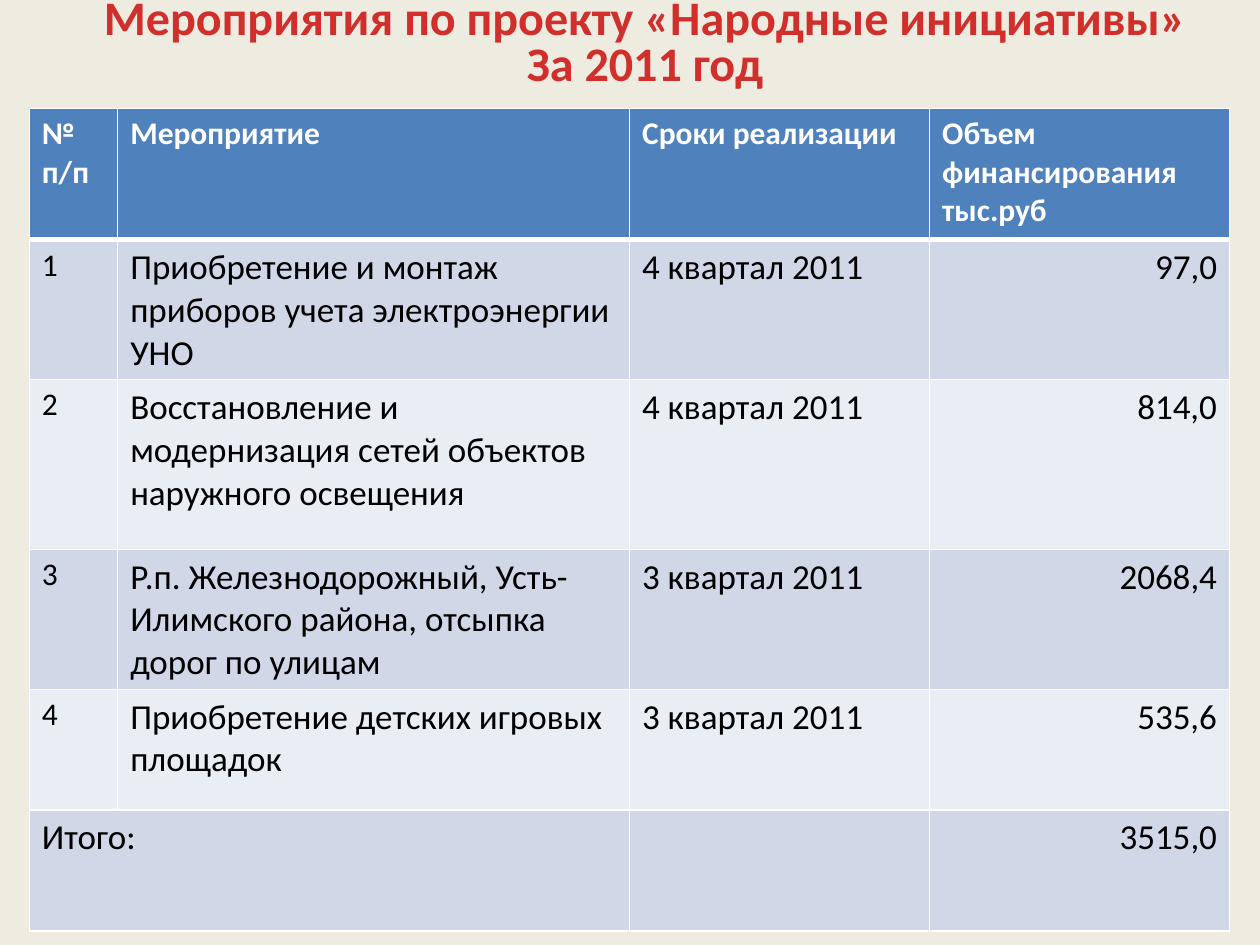
from dataclasses import dataclass

from lxml.etree import SubElement
from pptx import Presentation
from pptx.dml.color import RGBColor as RGB
from pptx.enum.text import MSO_ANCHOR as Anchor, PP_ALIGN as Align
from pptx.oxml.ns import qn
from pptx.util import Pt


@dataclass(frozen=True)
class Theme:
    font: str = "Calibri"
    page: RGB = RGB(0xEE, 0xEC, 0xE1)
    title: RGB = RGB(0xD0, 0x2F, 0x2C)
    header: RGB = RGB(0x4F, 0x81, 0xBD)
    bands: tuple = (RGB(0xD0, 0xD8, 0xE8), RGB(0xE9, 0xED, 0xF4))
    light: RGB = RGB(0xFF, 0xFF, 0xFF)
    dark: RGB = RGB(0, 0, 0)
    title_size: float = 27.5
    label_size: float = 18
    body_size: float = 20


theme = Theme()


def write(paragraph, text, size, color, bold=False, align=Align.LEFT):
    paragraph.text = text
    paragraph.alignment = align
    font = paragraph.font
    for name, value in {"name": theme.font, "size": Pt(size), "bold": bold}.items():
        setattr(font, name, value)
    font.color.rgb = color


def add_borders(cell, widths):
    """Draw the edges given as {"L": points, ...}, in the order L, R, T, B."""
    properties = cell._tc.get_or_add_tcPr()
    for edge, width in widths.items():
        line = SubElement(properties, qn(f"a:ln{edge}"), w=str(Pt(width)))
        fill = SubElement(line, qn("a:solidFill"))
        SubElement(fill, qn("a:srgbClr"), val=str(theme.light))


deck = Presentation()
deck.slide_width, deck.slide_height = Pt(720), Pt(540)
slide = deck.slides.add_slide(deck.slide_layouts[6])
slide.background.fill.solid()
slide.background.fill.fore_color.rgb = theme.page

# Title
heading = slide.shapes.add_textbox(Pt(44.64), Pt(0), Pt(648), Pt(62)).text_frame
heading_format = {
    "word_wrap": True,
    "vertical_anchor": Anchor.MIDDLE,
    "margin_top": Pt(0),
    "margin_bottom": Pt(11),
}
for name, value in heading_format.items():
    setattr(heading, name, value)
title_lines = ["Мероприятия по проекту «Народные инициативы»", "За 2011 год"]
for index, title_line in enumerate(title_lines):
    paragraph = heading.add_paragraph() if index else heading.paragraphs[0]
    write(paragraph, title_line, theme.title_size, theme.title, True, Align.CENTER)
    paragraph.line_spacing = 0.8

# Table of measures
measures = [
    ["№ п/п", "Мероприятие", "Сроки реализации", "Объем финансирования тыс.руб"],
    ["1", "Приобретение и монтаж приборов учета электроэнергии УНО", "4 квартал 2011", "97,0"],
    ["2", "Восстановление и модернизация сетей объектов наружного освещения", "4 квартал 2011", "814,0"],
    ["3", "Р.п. Железнодорожный, Усть-Илимского района, отсыпка дорог по улицам", "3 квартал 2011", "2068,4"],
    ["4", "Приобретение детских игровых площадок", "3 квартал 2011", "535,6"],
    ["Итого:", "", "", "3515,0"],
]
column_widths = [50.5, 292.5, 171.5, 171.5]
row_heights = [75, 80, 97, 80, 69, 69]
total_row = len(measures) - 1

table = slide.shapes.add_table(
    len(measures), len(column_widths),
    Pt(16.75), Pt(62), Pt(sum(column_widths)), Pt(sum(row_heights)),
).table
for column, width in zip(table.columns, column_widths):
    column.width = Pt(width)
for row, height in zip(table.rows, row_heights):
    row.height = Pt(height)
table.cell(total_row, 0).merge(table.cell(total_row, 1))

for r, measure in enumerate(measures):
    is_header = r == 0
    for c, text in enumerate(measure):
        cell = table.cell(r, c)
        add_borders(cell, {"L": 1, "R": 1, "T": 3 if r == 1 else 1, "B": 3 if is_header else 1})
        cell.fill.solid()
        cell.fill.fore_color.rgb = theme.header if is_header else theme.bands[(r - 1) % 2]
        is_label = is_header or (c == 0 and r != total_row)
        write(
            cell.text_frame.paragraphs[0], text,
            theme.label_size if is_label else theme.body_size,
            theme.light if is_header else theme.dark,
            is_header,
            Align.RIGHT if c == 3 and not is_header else Align.LEFT,
        )

deck.save("out.pptx")
